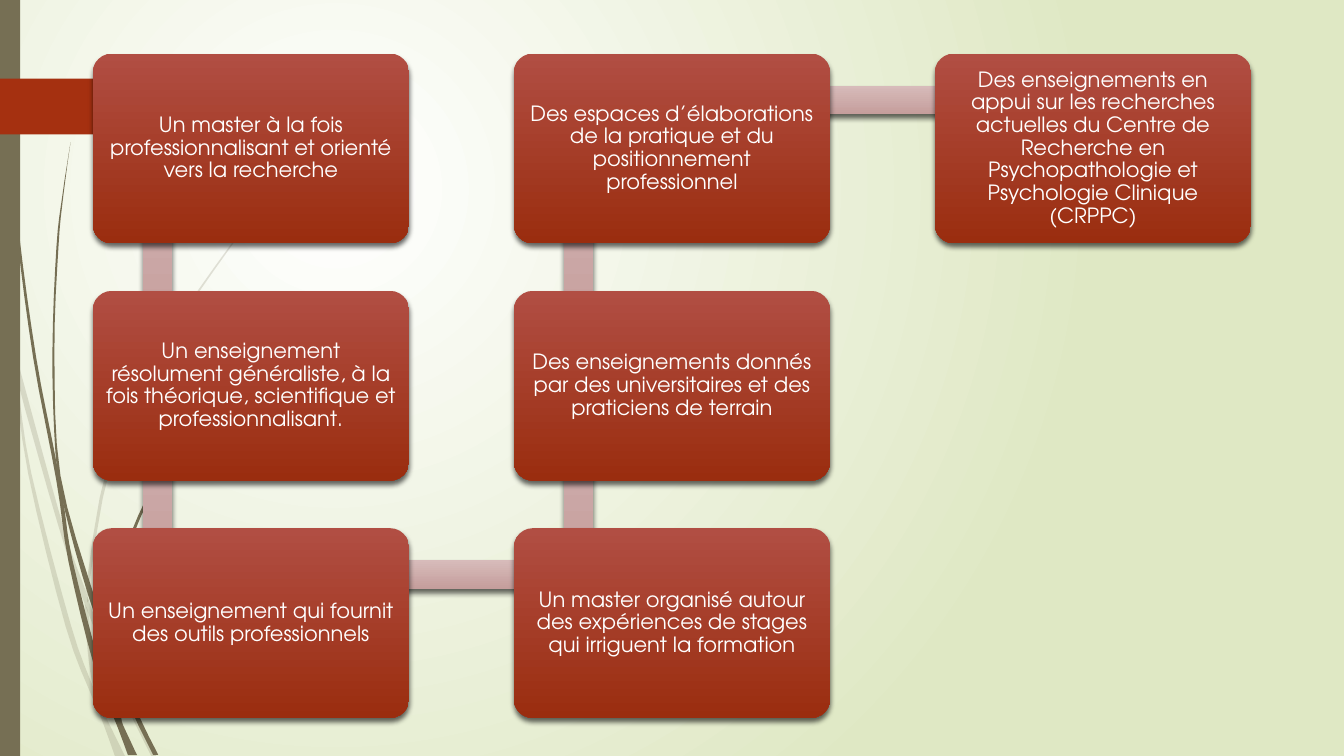
import lxml.etree
import pptx
import pptx.dml.color
import pptx.enum.shapes
import pptx.enum.text
import pptx.oxml
import pptx.oxml.ns
import pptx.util

Cm = pptx.util.Cm
Pt = pptx.util.Pt
SHAPE = pptx.enum.shapes.MSO_SHAPE
qn = pptx.oxml.ns.qn

OLIVE = "766F54"
STEM_UNIT = Cm(2.54)
GRID = 1000  # freeform steps per stem unit, as freeform points are whole numbers
STEPS = 4

# Each stem is a pair of edges: one drawn downwards, one back up.
PALE_STEMS = [
    ([(0, 2.99), (0.11, 3.5), (0.28, 4.7), (0.65, 6.21), (0.92, 6.93), (1.01, 7.14), (1.14, 7.5)],
     [(1.24, 7.5), (1.05, 7.11), (0.93, 6.83), (0.7, 6.19), (0.31, 4.69), (0.17, 3.76),
      (0.09, 3.22), (0, 2.82)]),
    ([(0.14, 3.45), (0.17, 3.76), (0.58, 5.22), (0.84, 5.99), (1.23, 6.94), (1.5, 7.5)],
     [(1.55, 7.5), (1.27, 6.92), (0.92, 6.07), (0.85, 5.86), (0.62, 5.2), (0.14, 3.45)]),
    ([(0.84, 5.99), (0.87, 6.46), (0.93, 6.83), (1.05, 7.11)],
     [(1.03, 7.06), (0.91, 6.46), (0.88, 6.1), (0.84, 5.99)]),
    ([(3.12, 1.53), (2.68, 1.97), (2.28, 2.44), (1.58, 3.48), (1.07, 4.61), (0.85, 5.84)],
     [(0.88, 5.96), (0.88, 5.84), (1.1, 4.62), (1.6, 3.49), (2.29, 2.45), (2.68, 1.98),
      (3.12, 1.54)]),
]
DARK_STEMS = [
    ([(0.03, 0), (0.07, 1.1), (0.17, 2.33), (0.33, 3.55), (0.56, 4.77), (0.68, 5.57),
      (0.93, 6.59), (1.17, 7.22), (1.27, 7.49)],
     [(1.36, 7.49), (1.22, 7.19), (1.1, 6.91), (0.98, 6.57), (0.72, 5.56), (0.64, 5.05),
      (0.55, 4.53), (0.36, 3.55), (0.19, 2.32), (0.08, 1.09), (0.04, 0)]),
    ([(0.7, 1.41), (0.62, 1.93), (0.56, 2.45), (0.52, 3.49), (0.55, 4.49), (0.64, 5.05),
      (0.88, 5.92), (1.11, 6.56), (1.32, 7.08), (1.52, 7.49)],
     [(1.57, 7.49), (1.36, 7.06), (1.13, 6.49), (0.93, 5.9), (0.6, 4.72), (0.54, 3.49),
      (0.58, 2.45), (0.63, 1.93), (0.7, 1.41)]),
    ([(1.06, 6.45), (1.1, 6.91), (1.22, 7.19)],
     [(1.21, 7.16), (1.11, 6.56), (1.06, 6.45)]),
    ([(2.6, 3.44), (2.31, 3.73), (2.04, 4.05), (1.56, 4.74), (1.22, 5.51), (1.06, 6.31)],
     [(1.1, 6.41), (1.11, 6.33), (1.25, 5.52), (1.58, 4.76), (2.05, 4.06), (2.31, 3.74),
      (2.61, 3.44)]),
]

# Cards in reading order, with the column and row of the snaking path.
CARDS = [
    (0, 0, "Un master à la fois professionnalisant et orienté vers la recherche"),
    (0, 1, "Un enseignement résolument généraliste, à la fois théorique, "
           "scientifique et professionnalisant."),
    (0, 2, "Un enseignement qui fournit des outils professionnels"),
    (1, 2, "Un master organisé autour des expériences de stages qui irriguent la formation"),
    (1, 1, "Des enseignements donnés par des universitaires et des praticiens de terrain"),
    (1, 0, "Des espaces d’élaborations de la pratique et du positionnement professionnel"),
    (2, 0, "Des enseignements en appui sur les recherches actuelles du Centre de Recherche "
           "en Psychopathologie et Psychologie Clinique (CRPPC)"),
]


def rgb(color):
    return pptx.dml.color.RGBColor.from_string(color)


def fill_solid(shape, color, alpha=100):
    shape.shadow.inherit = False
    shape.line.fill.background()
    shape.fill.solid()
    shape.fill.fore_color.rgb = rgb(color)
    if alpha < 100:
        srgb = shape._element.spPr.find(".//" + qn("a:srgbClr"))
        lxml.etree.SubElement(srgb, qn("a:alpha"), val=str(alpha * 1000))


def fill_gradient(fill, start, end):
    """Apply a two-colour gradient running from top to bottom."""
    fill.gradient()
    fill.gradient_angle = 270
    for stop, color, position in zip(fill.gradient_stops, (start, end), (0, 1)):
        stop.color.rgb = rgb(color)
        stop.position = position


def add_raised(slide, kind, box, start, end):
    """Add a gradient shape that casts a soft shadow downwards."""
    shape = slide.shapes.add_shape(kind, *box)
    fill_gradient(shape.fill, start, end)
    shape.line.fill.background()
    shape.shadow.inherit = False
    effects = shape._element.spPr.find(qn("a:effectLst"))
    shadow = lxml.etree.SubElement(effects, qn("a:outerShdw"), blurRad=str(Pt(4)),
                                   dist=str(Pt(3)), dir="5400000", rotWithShape="0")
    black = lxml.etree.SubElement(shadow, qn("a:srgbClr"), val="000000")
    lxml.etree.SubElement(black, qn("a:alpha"), val="60000")
    return shape


def smooth(edge):
    """Return grid points on a Catmull-Rom curve through the edge."""
    padded = [edge[0], *edge, edge[-1]]
    points = [edge[0]]
    for a, b, c, d in zip(padded, padded[1:], padded[2:], padded[3:]):
        for step in range(1, STEPS + 1):
            t = step / STEPS
            points.append(tuple(
                (2 * q + (r - p) * t + (2 * p - 5 * q + 4 * r - s) * t ** 2
                 + (3 * q - p - 3 * r + s) * t ** 3) / 2
                for p, q, r, s in zip(a, b, c, d)))
    return [(round(x * GRID), round(y * GRID)) for x, y in points]


def add_stems(slide, left, top, stems, alpha):
    for down, up in stems:
        outline = smooth(down) + smooth(up)
        builder = slide.shapes.build_freeform(*outline[0], scale=STEM_UNIT / GRID)
        builder.add_line_segments(outline[1:])
        fill_solid(builder.convert_to_shape(left, top), OLIVE, alpha)


def add_backdrop(slide, left, top, height):
    background = slide.background.fill
    fill_gradient(background, "FFFFFF", "DFE8C4")
    gradient = slide.background._cSld.find(".//" + qn("a:gradFill"))
    gradient.remove(gradient.find(qn("a:lin")))
    circle = lxml.etree.SubElement(gradient, qn("a:path"), {"path": "circle"})
    lxml.etree.SubElement(circle, qn("a:fillToRect"),
                          l="50000", t="50000", r="100000", b="100000")

    add_stems(slide, left, top, PALE_STEMS, 20)
    add_stems(slide, left, top, DARK_STEMS, 100)
    side_band = slide.shapes.add_shape(SHAPE.RECTANGLE, left, top, Cm(0.51), height)
    fill_solid(side_band, OLIVE)
    page_tag = slide.shapes.add_shape(SHAPE.PENTAGON, left, top + Cm(1.98), Cm(4.42), Cm(1.41))
    page_tag.adjustments[0] = 0.47
    fill_solid(page_tag, "A53010")


def add_link(slide, start, end):
    """Join two neighbouring cards, given by their top left corners."""
    left, top = min(start[0], end[0]), min(start[1], end[1])
    if start[0] == end[0]:
        box = left + Cm(1.27), top + Cm(1.19), Cm(0.72), Cm(5.94)
    else:
        box = left + Cm(1.63), top + Cm(0.81), Cm(10.57), Cm(0.72)
    add_raised(slide, SHAPE.RECTANGLE, box, "D7BBBA", "C59E9C")


def add_card(slide, box, statement):
    card = add_raised(slide, SHAPE.ROUNDED_RECTANGLE, box, "B14E43", "9A2D0F")
    card.adjustments[0] = 0.1
    frame = card.text_frame
    frame.word_wrap = True
    frame.vertical_anchor = pptx.enum.text.MSO_ANCHOR.MIDDLE
    frame.margin_left = frame.margin_right = Cm(0.15)
    frame.margin_top = frame.margin_bottom = Cm(0.15)
    paragraph = frame.paragraphs[0]
    paragraph.text = statement
    paragraph.alignment = pptx.enum.text.PP_ALIGN.CENTER
    paragraph.line_spacing = 0.9
    paragraph.font.name = "TeX Gyre Adventor"
    paragraph.font.size = Pt(15)
    paragraph.font.color.rgb = rgb("FFFFFF")


def add_card_path(slide, left, top, width, height):
    card_width, card_height = Cm(7.97), Cm(4.78)
    column_pitch = (width - card_width) // 2
    row_pitch = (height - card_height) // 2
    corners = [(left + column * column_pitch, top + row * row_pitch)
               for column, row, _ in CARDS]
    for start, end in zip(corners, corners[1:]):
        add_link(slide, start, end)
    for corner, (_, _, statement) in zip(corners, CARDS):
        add_card(slide, (*corner, card_width, card_height), statement)


def main():
    deck = pptx.Presentation()
    deck.slide_width, deck.slide_height = Cm(33.87), Cm(19.05)
    slide = deck.slides.add_slide(deck.slide_layouts[6])
    add_backdrop(slide, 0, 0, deck.slide_height)
    add_card_path(slide, Cm(2.34), Cm(1.35), Cm(29.19), Cm(16.74))
    deck.save("out.pptx")


if __name__ == "__main__":
    main()
